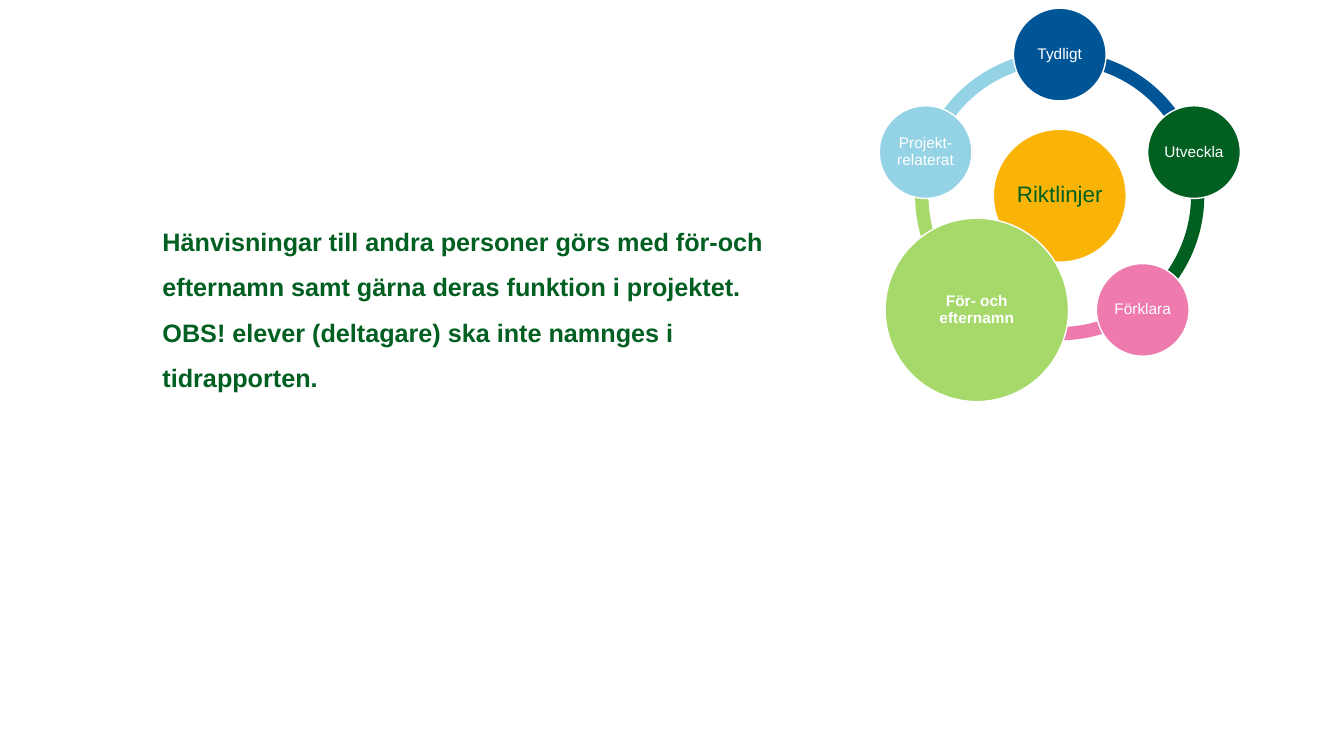
"""Build a slide with a guideline text and a radial cycle of five principles."""
import math

from pptx import Presentation
from pptx.dml.color import RGBColor
from pptx.enum import shapes, text
from pptx.util import Pt

WHITE = RGBColor(0xFF, 0xFF, 0xFF)
GREEN = RGBColor(0x00, 0x5F, 0x21)
BLUE = RGBColor(0x00, 0x55, 0x96)
PINK = RGBColor(0xEE, 0x7A, 0xAE)
LIME = RGBColor(0xA6, 0xD9, 0x6A)
SKY = RGBColor(0x94, 0xD3, 0xE5)
AMBER = RGBColor(0xFA, 0xB4, 0x07)

CENTER_X, CENTER_Y = 757, 139.8
ORBIT_RADIUS = 100.8
RING_SIZE = 206.6
RING_THICKNESS = 0.046
HUB_SIZE = 95
NODE_SIZE = 66.2
FOCUS_SIZE = 131
TOP_ANGLE = 270
ADJUSTMENT_PER_DEGREE = 0.6

GUIDELINE = (
    "Hänvisningar till andra personer görs med för-och efternamn samt gärna "
    "deras funktion i projektet.\v"
    "OBS! elever (deltagare) ska inte namnges i tidrapporten."
)
HUB = "Riktlinjer"
FOCUS = "För- och efternamn"
NODES = [
    ("Tydligt", BLUE),
    ("Utveckla", GREEN),
    ("Förklara", PINK),
    (FOCUS, LIME),
    ("Projekt-relaterat", SKY),
]


def write(tf, content, size, color, bold=False, align=text.PP_ALIGN.LEFT, spacing=1.0):
    """Fill a text frame with one formatted paragraph."""
    tf.word_wrap = True
    tf.vertical_anchor = text.MSO_ANCHOR.MIDDLE
    p = tf.paragraphs[0]
    p.text = content
    p.alignment = align
    p.line_spacing = spacing
    for r in p.runs:
        r.font.name = "Arial"
        r.font.size = Pt(size)
        r.font.bold = bold
        r.font.color.rgb = color


def add_centered(slide, kind, x, y, size, fill):
    """Add a filled shape of equal width and height around a centre point."""
    sp = slide.shapes.add_shape(
        kind, Pt(x - size / 2), Pt(y - size / 2), Pt(size), Pt(size))
    sp.shadow.inherit = False
    sp.fill.solid()
    sp.fill.fore_color.rgb = fill
    return sp


def add_arc(slide, start, end, fill):
    """Add a ring segment between two angles in degrees."""
    sp = add_centered(slide, shapes.MSO_SHAPE.BLOCK_ARC,
                      CENTER_X, CENTER_Y, RING_SIZE, fill)
    sp.line.fill.background()
    sp.adjustments[0] = start * ADJUSTMENT_PER_DEGREE
    sp.adjustments[1] = end * ADJUSTMENT_PER_DEGREE
    sp.adjustments[2] = RING_THICKNESS


def add_circle(slide, x, y, diameter, fill, label, **text_format):
    """Add a white-rimmed circle with a centred label."""
    sp = add_centered(slide, shapes.MSO_SHAPE.OVAL, x, y, diameter, fill)
    sp.line.color.rgb = WHITE
    sp.line.width = Pt(1)
    tf = sp.text_frame
    tf.margin_left = tf.margin_right = tf.margin_top = tf.margin_bottom = Pt(1.4)
    write(tf, label, align=text.PP_ALIGN.CENTER, spacing=0.9, **text_format)


def add_cycle(slide):
    """Draw the ring, the hub and the nodes at equal angles."""
    step = 360 / len(NODES)
    angles = [(TOP_ANGLE + step * i) % 360 for i in range(len(NODES))]

    for angle, (_, color) in zip(angles, NODES):
        add_arc(slide, angle, (angle + step) % 360, color)

    add_circle(slide, CENTER_X, CENTER_Y, HUB_SIZE, AMBER, HUB, size=16, color=GREEN)

    for angle, (label, color) in zip(angles, NODES):
        x = CENTER_X + ORBIT_RADIUS * math.cos(math.radians(angle))
        y = CENTER_Y + ORBIT_RADIUS * math.sin(math.radians(angle))
        focused = label == FOCUS
        diameter = FOCUS_SIZE if focused else NODE_SIZE
        add_circle(slide, x, y, diameter, color, label,
                   size=11, color=WHITE, bold=focused)


def add_guideline(slide):
    """Add the guideline text on the left."""
    box = slide.shapes.add_textbox(Pt(109), Pt(121.6), Pt(484), Pt(188))
    write(box.text_frame, GUIDELINE, size=18, color=GREEN, bold=True, spacing=1.5)


def main():
    """Create and save the slide."""
    prs = Presentation()
    prs.slide_width, prs.slide_height = Pt(960), Pt(540)
    slide = prs.slides.add_slide(prs.slide_layouts[6])
    add_guideline(slide)
    add_cycle(slide)
    prs.save("out.pptx")


if __name__ == "__main__":
    main()
